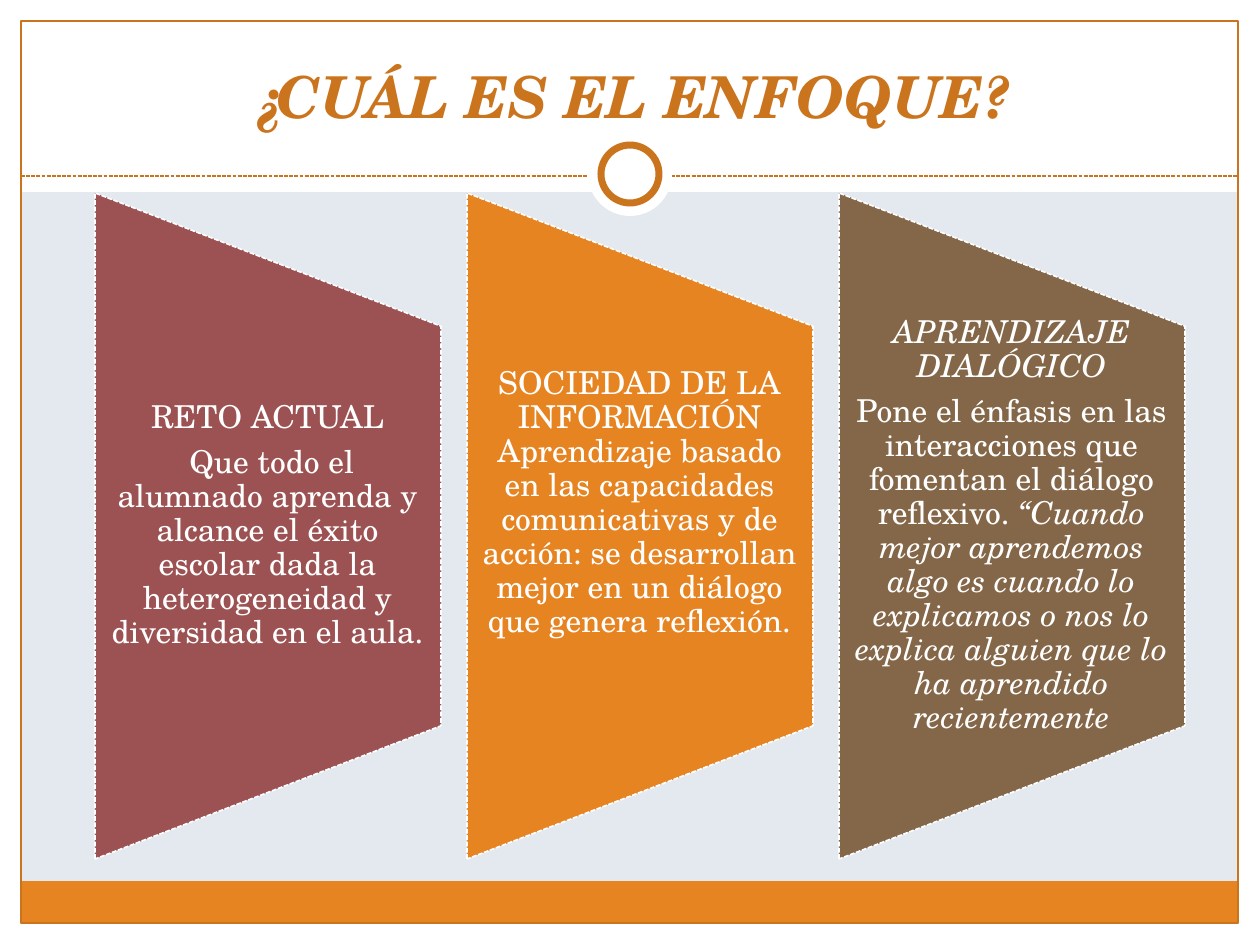
import pptx
import pptx.util
import pptx.dml.color
import pptx.enum.dml
import pptx.enum.shapes
import pptx.enum.text
import pptx.oxml

FONT = "TeX Gyre Schola"
WHITE, RUST, ORANGE, MIST = "FFFFFF", "CB741E", "E68422", "E4E9EF"
WIDE, HIGH = 1260, 945
TITLE = "¿CUÁL ES EL ENFOQUE?"

# Each panel: fill, bottom inset, paragraphs as lists of (text, italic)
PANELS = [
    ("9C5252", 0, [
        [("RETO ACTUAL", False)],
        [(" Que todo el alumnado aprenda y alcance el éxito escolar dada la "
          "heterogeneidad y diversidad en el aula.", False)],
    ]),
    (ORANGE, 45, [
        [("SOCIEDAD DE LA INFORMACIÓN Aprendizaje basado en las capacidades "
          "comunicativas y de acción: se desarrollan mejor en un diálogo que "
          "genera reflexión.", False)],
    ]),
    ("846648", 0, [
        [("APRENDIZAJE DIALÓGICO", True)],
        [("Pone el énfasis en las interacciones que fomentan el diálogo "
          "reflexivo. ", False),
         ("“Cuando mejor aprendemos algo es cuando lo explicamos o nos lo "
          "explica alguien que lo ha aprendido recientemente", True)],
    ]),
]
LEFT, PITCH, PANEL_W, PANEL_H, MID = 95, 372, 346, 666, 526
TEXT_H = 400

# Frame parts: left, top, width, height, fill
BANDS = [
    (0, 924, WIDE, 21, WHITE),
    (0, 0, WIDE, 192, WHITE),
    (0, 0, 21, HIGH, WHITE),
    (1239, 0, 21, HIGH, WHITE),
    (21, 881, 1217, 43, ORANGE),
]

SHAPE = pptx.enum.shapes.MSO_SHAPE
DASH = pptx.enum.dml.MSO_LINE.SQUARE_DOT  # written as sysDot or sysDash
ANCHOR = pptx.enum.text.MSO_ANCHOR


def px(n):
    return pptx.util.Emu(round(n * 914400 / 126))


def paint(color, code):
    color.rgb = pptx.dml.color.RGBColor.from_string(code)


def stroke(line, code, width, dashed=False):
    paint(line.color, code)
    line.width = pptx.util.Pt(width)
    if dashed:
        line.dash_style = DASH
        line._get_or_add_ln().prstDash.set("val", "sysDash")


def add_form(slide, kind, box, fill=None, line=None):
    form = slide.shapes.add_shape(kind, *map(px, box))
    form.shadow.inherit = False
    if fill:
        form.fill.solid()
        paint(form.fill.fore_color, fill)
    else:
        form.fill.background()
    if line:
        stroke(form.line, *line)
    else:
        form.line.fill.background()
    return form


def add_text(slide, box, anchor, insets):
    """Return the wrapped frame of a new text box; insets are left, top, right, bottom."""
    frame = slide.shapes.add_textbox(*map(px, box)).text_frame
    frame.word_wrap = True
    frame.vertical_anchor = anchor
    (frame.margin_left, frame.margin_top,
     frame.margin_right, frame.margin_bottom) = map(px, insets)
    return frame


def style(para, size, code):
    para.alignment = pptx.enum.text.PP_ALIGN.CENTER
    para.font.name = FONT
    para.font.size = pptx.util.Pt(size)
    paint(para.font.color, code)


def add_frame(slide):
    for *box, fill in BANDS:
        add_form(slide, SHAPE.RECTANGLE, box, fill)
    add_form(slide, SHAPE.RECTANGLE, (21, 21, 1217, 902), line=(RUST, 0.75))
    rule = slide.shapes.add_connector(
        pptx.enum.shapes.MSO_CONNECTOR.STRAIGHT, *map(px, (21, 176, 1239, 176)))
    stroke(rule.line, RUST, 0.75, True)
    rule._element.spPr.append(pptx.oxml.parse_xml(
        '<a:effectLst xmlns:a="http://schemas.openxmlformats.org/drawingml/2006/main"/>'))
    add_form(slide, SHAPE.OVAL, (588, 132, 84, 84), WHITE)
    add_form(slide, SHAPE.OVAL, (601, 145, 58, 58), WHITE, (RUST, 4))


def add_title(slide):
    frame = add_text(slide, (42, 32, 1176, 104), ANCHOR.BOTTOM, (13, 6, 13, 6))
    para = frame.paragraphs[0]
    para.text = TITLE
    style(para, 33, RUST)
    para.font.bold = para.font.italic = True


def add_panel(slide, left, fill, below, paras):
    # The box is given before its quarter turn, about the same centre
    box = (left + (PANEL_W - PANEL_H) / 2, MID - PANEL_W / 2, PANEL_H, PANEL_W)
    form = add_form(slide, SHAPE.FLOWCHART_MANUAL_OPERATION, box, fill,
                    (WHITE, 0.9, True))
    form.rotation = 270
    frame = add_text(slide, (left, MID - TEXT_H / 2, PANEL_W, TEXT_H),
                     ANCHOR.MIDDLE, (15, 0, 16, below))
    for i, runs in enumerate(paras):
        para = frame.add_paragraph() if i else frame.paragraphs[0]
        style(para, 18, WHITE)
        para.line_spacing = 0.9
        para.space_after = pptx.util.Pt(6.3)
        for text, italic in runs:
            run = para.add_run()
            run.text = text
            run.font.italic = italic


def main():
    deck = pptx.Presentation()
    deck.slide_width, deck.slide_height = px(WIDE), px(HIGH)
    slide = deck.slides.add_slide(deck.slide_layouts[6])
    slide.background.fill.solid()
    paint(slide.background.fill.fore_color, MIST)
    add_frame(slide)
    add_title(slide)
    for i, panel in enumerate(PANELS):
        add_panel(slide, LEFT + i * PITCH, *panel)
    deck.save("out.pptx")


if __name__ == "__main__":
    main()
